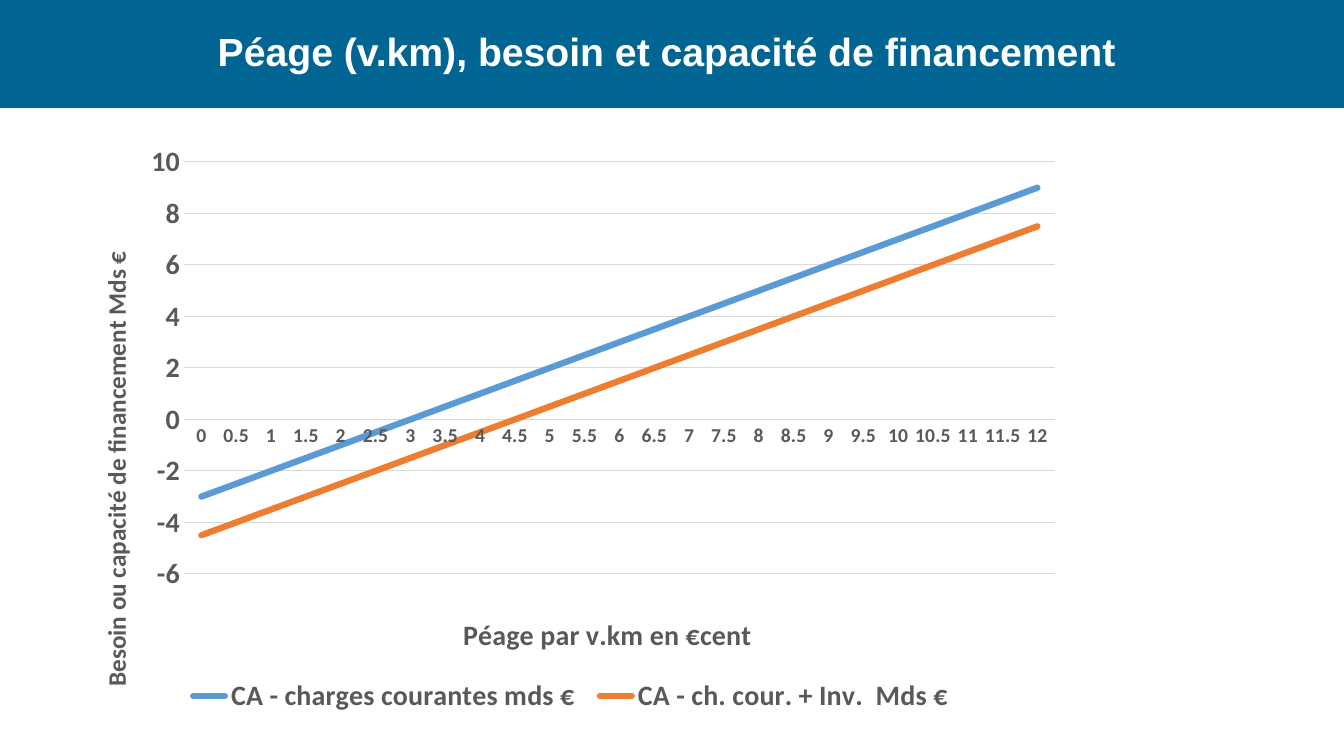
from pptx import Presentation
from pptx import util as u
from pptx.chart.data import CategoryChartData
from pptx.dml.color import RGBColor
from pptx.enum import chart as charts, shapes, text
from pptx.oxml import parse_xml
from pptx.oxml.ns import nsdecls

SCALE = 12192000 / 1344  # EMU per px
CHART_BOX = (73, 133, 1002, 586)
GREY, GRID = "595959", "D9D9D9"


def px(length):
    return u.Emu(round(length * SCALE))


def colour(code):
    return RGBColor.from_string(code)


def set_font(font, size, code, name="Calibri"):
    font.size = u.Pt(size)
    font.bold = True
    font.name = name
    font.color.rgb = colour(code)


def set_line(line, code, width):
    line.color.rgb = colour(code)
    line.width = u.Pt(width)


def manual_layout(left, top, width=None, height=None):
    """Layout element for a chart part, given in slide px."""
    box_left, box_top, box_width, box_height = CHART_BOX
    parts = {"xMode": "edge", "yMode": "edge",
             "x": round((left - box_left) / box_width, 4),
             "y": round((top - box_top) / box_height, 4)}
    if width:
        parts = {"layoutTarget": "inner", **parts,
                 "w": round(width / box_width, 4),
                 "h": round(height / box_height, 4)}
    inner = "".join(f'<c:{tag} val="{value}"/>' for tag, value in parts.items())
    return parse_xml(f'<c:layout {nsdecls("c")}><c:manualLayout>{inner}'
                     '</c:manualLayout></c:layout>')


def add_banner(page, wording, left, top, width, height):
    banner = page.shapes.add_shape(shapes.MSO_SHAPE.RECTANGLE,
                                   px(left), px(top), px(width), px(height))
    banner.shadow.inherit = False
    banner.fill.solid()
    banner.fill.fore_color.rgb = colour("006593")
    banner.line.fill.background()
    frame = banner.text_frame
    frame.word_wrap = True
    frame.vertical_anchor = text.MSO_ANCHOR.MIDDLE
    para = frame.paragraphs[0]
    para.text = wording
    para.alignment = text.PP_ALIGN.CENTER
    para.line_spacing = 0.9
    set_font(para.font, 28, "FFFFFF", "Arial")


def style_axis(axis, title, title_size, label_size, left, top):
    axis.major_tick_mark = axis.minor_tick_mark = charts.XL_TICK_MARK.NONE
    set_font(axis.tick_labels.font, label_size, GREY)
    para = axis.axis_title.text_frame.paragraphs[0]
    para.text = title
    set_font(para.font, title_size, GREY)
    heading = axis.axis_title._element
    for layout in heading.xpath("c:layout"):
        heading.remove(layout)
    heading.xpath("c:tx")[0].addnext(manual_layout(left, top))


def add_line_chart(page, categories, series_values):
    data = CategoryChartData()
    data.categories = categories
    for name, values in series_values.items():
        data.add_series(name, values)
    chart = page.shapes.add_chart(charts.XL_CHART_TYPE.LINE,
                                  *map(px, CHART_BOX), data).chart
    chart.has_title = False
    chart.font.size = u.Pt(10)
    chart.font.name = "Calibri"

    # Lines
    plot = chart.plots[0]
    plot.vary_by_categories = False
    for series, code in zip(plot.series, ("5B9BD5", "ED7D31")):
        series.smooth = False
        series.marker.style = charts.XL_MARKER_STYLE.NONE
        set_line(series.format.line, code, 4.5)
        series._element.xpath("c:spPr/a:ln")[0].set("cap", "rnd")

    # Axes
    across, upright = chart.category_axis, chart.value_axis
    style_axis(across, "Péage par v.km en €cent", 20, 14, 458, 610)
    set_line(across.format.line, GRID, 0.75)
    style_axis(upright, "Besoin ou capacité de financement Mds €", 18, 20, 94, 247)
    upright.format.line.fill.background()
    upright.minimum_scale, upright.maximum_scale = -6, 10
    upright.major_unit = 2
    set_line(upright.major_gridlines.format.line, GRID, 0.75)

    # Plot area and legend
    area = chart._chartSpace.xpath("c:chart/c:plotArea")[0]
    for layout in area.xpath("c:layout"):
        area.remove(layout)
    area.insert(0, manual_layout(184, 162, 871, 412))
    chart.has_legend = True
    chart.legend.position = charts.XL_LEGEND_POSITION.BOTTOM
    chart.legend.include_in_layout = False
    set_font(chart.legend.font, 20, GREY)


def main():
    deck = Presentation()
    deck.slide_width, deck.slide_height = px(1344), px(756)
    page = deck.slides.add_slide(deck.slide_layouts[6])

    add_banner(page, "Péage (v.km), besoin et capacité de financement ",
               0, 0, 1344, 108)

    # Each half cent of toll brings half a billion
    tolls = [step / 2 for step in range(25)]
    add_line_chart(page, [f"{toll:g}" for toll in tolls], {
        "CA - charges courantes mds € ": [toll - 3 for toll in tolls],
        "CA - ch. cour. + Inv.  Mds € ": [toll - 4.5 for toll in tolls],
    })
    deck.save("out.pptx")


if __name__ == "__main__":
    main()
